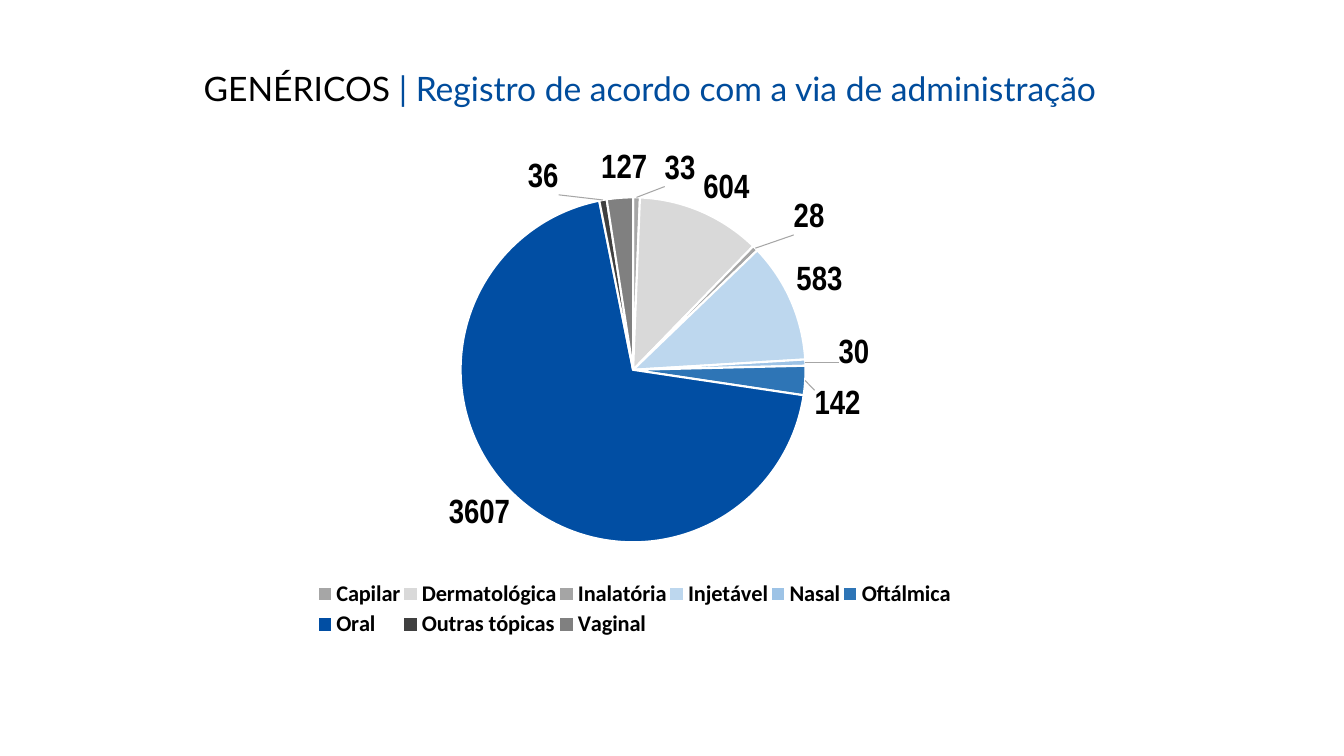
from lxml import etree
from pptx import Presentation
from pptx.chart.data import CategoryChartData
from pptx.dml.color import RGBColor
from pptx.enum.chart import XL_CHART_TYPE, XL_LABEL_POSITION, XL_LEGEND_POSITION
from pptx.enum.text import MSO_ANCHOR, MSO_AUTO_SIZE, PP_ALIGN
from pptx.oxml.ns import qn
from pptx.util import Pt

PIE = XL_CHART_TYPE.PIE
OUTSIDE_END = XL_LABEL_POSITION.OUTSIDE_END
LEGEND_BOTTOM = XL_LEGEND_POSITION.BOTTOM
MIDDLE = MSO_ANCHOR.MIDDLE
NO_AUTOFIT = MSO_AUTO_SIZE.NONE
LEFT = PP_ALIGN.LEFT

# Content
COLORS = {"text": "000000", "accent": "004C9C", "border": "FFFFFF", "leader": "A6A6A6"}
TITLE = [("GENÉRICOS ", "text"),
         ("| Registro de acordo com a via de administração", "accent")]
# Route, registrations, slice colour, label shift in points
ROUTES = [
    ("Capilar", 33, "A6A6A6", (31, -3.5)),
    ("Dermatológica", 604, "D9D9D9", None),
    ("Inalatória", 28, "A5A5A5", (24.5, -6.5)),
    ("Injetável", 583, "BDD7EE", None),
    ("Nasal", 30, "9DC3E6", (19.5, -5)),
    ("Oftálmica", 142, "2E75B6", (2.5, 18)),
    ("Oral", 3607, "014EA3", None),
    ("Outras tópicas", 36, "404040", (-31, 0.5)),
    ("Vaginal", 127, "808080", (3.5, -4)),
]
TITLE_BOX = (138.24, 34.6, 708.48, 59.76)
CHART_BOX = (14.4, 103.68, 886.32, 354.96)
# Areas inside the chart, in points: left, top, width, height
PIE_AREA = (314.6, 37.3, 246.4, 246.4)
LEGEND_AREA = (210.5, 308.5, 456.5, 46)


def rgb(value):
    return RGBColor.from_string(value)


def set_font(font, size, name, bold):
    font.size, font.name, font.bold = Pt(size), name, bold
    font.color.rgb = rgb(COLORS["text"])


def manual_layout(lengths, fixed=False, inner=False):
    """Layout element with lengths as fractions of the chart size."""
    layout = etree.Element(qn("c:layout"))
    manual = etree.SubElement(layout, qn("c:manualLayout"))
    settings = {"layoutTarget": "inner"} if inner else {}
    if fixed:
        settings.update(xMode="edge", yMode="edge")
    for tag, length, full in zip("xywh", lengths, CHART_BOX[2:] * 2):
        settings[tag] = round(length / full, 4)
    for tag, value in settings.items():
        etree.SubElement(manual, qn(f"c:{tag}")).set("val", str(value))
    return layout


def place_area(parent, layout, after=None):
    for old in parent.findall(qn("c:layout")):
        parent.remove(old)
    if after is None:
        parent.insert(0, layout)
    else:
        parent.find(qn(after)).addnext(layout)


prs = Presentation()
prs.slide_width, prs.slide_height = Pt(960), Pt(540)
slide = prs.slides.add_slide(prs.slide_layouts[5])

# Title
title = slide.shapes.title
title.left, title.top, title.width, title.height = map(Pt, TITLE_BOX)
frame = title.text_frame
frame.word_wrap, frame.auto_size, frame.vertical_anchor = True, NO_AUTOFIT, MIDDLE
heading = frame.paragraphs[0]
heading.alignment, heading.line_spacing = LEFT, 0.9
for words, color in TITLE:
    run = heading.add_run()
    run.text = words
    run.font.size, run.font.name = Pt(24), "Lato"
    run.font.color.rgb = rgb(COLORS[color])

# Pie chart
data = CategoryChartData()
data.categories = [route[0] for route in ROUTES]
data.add_series("Registros", [route[1] for route in ROUTES])
chart = slide.shapes.add_chart(PIE, *map(Pt, CHART_BOX), data).chart
chart.has_title = False
set_font(chart.font, 10, "Calibri", False)
plot = chart.plots[0]
plot.vary_by_categories = True
place_area(chart._chartSpace.chart.plotArea,
           manual_layout(PIE_AREA, fixed=True, inner=True))

# Legend
chart.has_legend = True
legend = chart.legend
legend.position, legend.include_in_layout = LEGEND_BOTTOM, False
set_font(legend.font, 16, "Calibri", True)
place_area(legend._element, manual_layout(LEGEND_AREA, fixed=True), "c:legendPos")

# Value labels
series = plot.series[0]
labels = series.data_labels
labels.show_value, labels.position = True, OUTSIDE_END
set_font(labels.font, 24, "Arial Narrow", True)

# Slices and shifted labels
for index, (_, _, color, shift) in enumerate(ROUTES):
    point = series.points[index]
    point.format.fill.solid()
    point.format.fill.fore_color.rgb = rgb(color)
    point.format.line.color.rgb = rgb(COLORS["border"])
    point.format.line.width = Pt(1.5)
    if shift:
        label = point.data_label
        label.position = OUTSIDE_END
        set_font(label.font, 24, "Arial Narrow", True)
        element = labels._element.findall(qn("c:dLbl"))[-1]
        place_area(element, manual_layout(shift), "c:idx")

# Leader lines
shown = labels._element.find(qn("c:showLeaderLines"))
if shown is None:
    shown = etree.SubElement(labels._element, qn("c:showLeaderLines"))
shown.set("val", "1")
leaders = etree.Element(qn("c:leaderLines"))
shown.addnext(leaders)
leader_line = etree.SubElement(etree.SubElement(leaders, qn("c:spPr")), qn("a:ln"), w="9525")
leader_fill = etree.SubElement(leader_line, qn("a:solidFill"))
etree.SubElement(leader_fill, qn("a:srgbClr")).set("val", COLORS["leader"])

prs.save("out.pptx")
